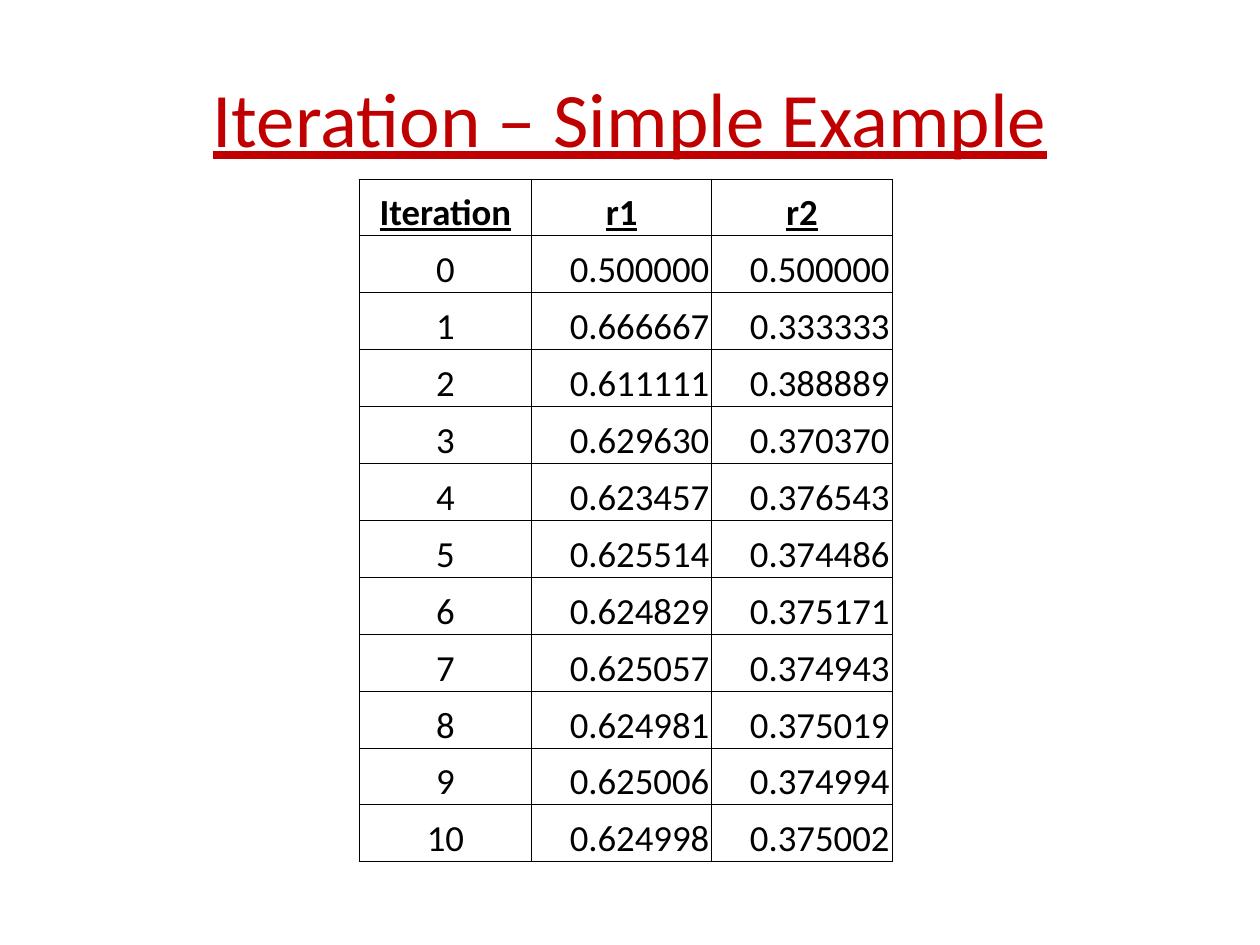
import pptx
import pptx.dml.color
import pptx.enum.text
import pptx.oxml
import pptx.oxml.ns
import pptx.util

Inches = pptx.util.Inches
Pt = pptx.util.Pt
ALIGN = pptx.enum.text.PP_ALIGN
ANCHOR = pptx.enum.text.MSO_ANCHOR

TITLE = "Iteration – Simple Example"
HEADINGS = ("Iteration", "r1", "r2")
ESTIMATES = [
    ("0.500000", "0.500000"),
    ("0.666667", "0.333333"),
    ("0.611111", "0.388889"),
    ("0.629630", "0.370370"),
    ("0.623457", "0.376543"),
    ("0.625514", "0.374486"),
    ("0.624829", "0.375171"),
    ("0.625057", "0.374943"),
    ("0.624981", "0.375019"),
    ("0.625006", "0.374994"),
    ("0.624998", "0.375002"),
]
COLUMN_WIDTHS = (1.37, 1.43, 1.43)
TABLE_LEFT, TABLE_TOP, TABLE_HEIGHT = 2.85, 1.42, 5.42
RED, BLACK = "C00000", "000000"


def color(hex_code):
    return pptx.dml.color.RGBColor.from_string(hex_code)


def write(frame, text, size, ink=BLACK, align=ALIGN.CENTER, bold=False, underline=False):
    paragraph = frame.paragraphs[0]
    paragraph.alignment = align
    run = paragraph.add_run()
    run.text = text
    run.font.name = "Calibri"
    run.font.size = Pt(size)
    run.font.bold = bold
    run.font.underline = underline
    run.font.color.rgb = color(ink)


def add_borders(cell, ink=BLACK, width=0.5):
    properties = cell._tc.get_or_add_tcPr()
    for side in ("lnL", "lnR", "lnT", "lnB"):
        properties.append(pptx.oxml.parse_xml(
            f'<a:{side} {pptx.oxml.ns.nsdecls("a")} w="{Pt(width)}">'
            f'<a:solidFill><a:srgbClr val="{ink}"/></a:solidFill></a:{side}>'))


def add_title(slide):
    title = slide.shapes.add_textbox(Inches(0.5), Inches(0.3), Inches(9), Inches(1.25))
    title.text_frame.word_wrap = True
    title.text_frame.vertical_anchor = ANCHOR.MIDDLE
    write(title.text_frame, TITLE, 44, ink=RED, underline=True)


def add_iteration_table(slide):
    rows = [HEADINGS] + [(str(step), *pair) for step, pair in enumerate(ESTIMATES)]
    table = slide.shapes.add_table(
        len(rows), len(HEADINGS), Inches(TABLE_LEFT), Inches(TABLE_TOP),
        Inches(sum(COLUMN_WIDTHS)), Inches(TABLE_HEIGHT)).table
    table.first_row = table.horz_banding = False
    for column, width in zip(table.columns, COLUMN_WIDTHS):
        column.width = Inches(width)
    for r, row in enumerate(rows):
        heading = r == 0
        for c, text in enumerate(row):
            cell = table.cell(r, c)
            cell.margin_left = cell.margin_right = cell.margin_top = Inches(0.02)
            cell.margin_bottom = 0
            cell.vertical_anchor = ANCHOR.BOTTOM
            add_borders(cell)
            cell.fill.background()
            align = ALIGN.CENTER if heading or c == 0 else ALIGN.RIGHT
            write(cell.text_frame, text, 21, align=align, bold=heading, underline=heading)


def main():
    deck = pptx.Presentation()
    deck.slide_width, deck.slide_height = Inches(10), Inches(7.5)
    slide = deck.slides.add_slide(deck.slide_layouts[6])
    add_title(slide)
    add_iteration_table(slide)
    deck.save("out.pptx")


if __name__ == "__main__":
    main()
